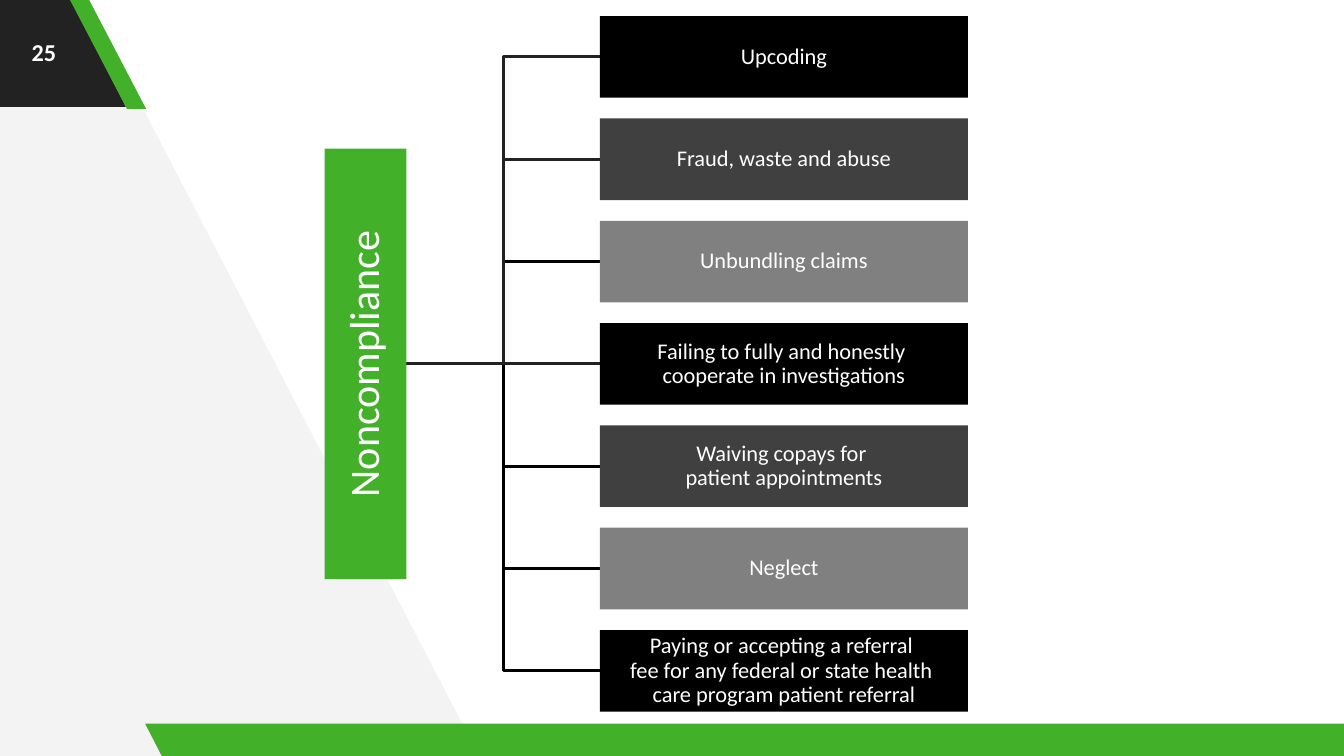
from pptx import Presentation
from pptx.dml.color import RGBColor
from pptx.enum.shapes import MSO_CONNECTOR, MSO_SHAPE
from pptx.enum.text import MSO_ANCHOR, PP_ALIGN
from pptx.oxml.xmlchemy import OxmlElement
from pptx.util import Inches, Pt

RECTANGLE = MSO_SHAPE.RECTANGLE
PARALLELOGRAM = MSO_SHAPE.PARALLELOGRAM
STRAIGHT, ELBOW = MSO_CONNECTOR.STRAIGHT, MSO_CONNECTOR.ELBOW
MIDDLE, CENTER = MSO_ANCHOR.MIDDLE, PP_ALIGN.CENTER

GREEN = RGBColor(0x43, 0xB0, 0x2A)
CHARCOAL = RGBColor(0x22, 0x22, 0x22)
PALE_GRAY = RGBColor(0xF3, 0xF3, 0xF3)
BLACK = RGBColor(0x00, 0x00, 0x00)
DARK_GRAY = RGBColor(0x40, 0x40, 0x40)
MID_GRAY = RGBColor(0x80, 0x80, 0x80)
SOFT_BLACK = RGBColor(0x21, 0x23, 0x22)
WHITE = RGBColor(0xFF, 0xFF, 0xFF)

FONT = "Calibri"
BOX_FILLS = (BLACK, DARK_GRAY, MID_GRAY)

# Each example with the colour of the line that leads to it
EXAMPLES = [
    ("Upcoding", SOFT_BLACK),
    ("Fraud, waste and abuse", SOFT_BLACK),
    ("Unbundling claims", BLACK),
    ("Failing to fully and honestly \vcooperate in investigations", SOFT_BLACK),
    ("Waiving copays for \vpatient appointments", BLACK),
    ("Neglect", BLACK),
    ("Paying or accepting a referral \vfee for any federal or state health \v"
     "care program patient referral", BLACK),
]


def paint(shape, color):
    shape.shadow.inherit = False
    shape.fill.solid()
    shape.fill.fore_color.rgb = color
    shape.line.fill.background()


def write(shape, text, size, inset, bold=False):
    frame = shape.text_frame
    frame.word_wrap = True
    frame.vertical_anchor = MIDDLE
    frame.margin_left = frame.margin_right = Inches(inset)
    frame.margin_top = frame.margin_bottom = Inches(inset)
    frame.text = text
    para = frame.paragraphs[0]
    para.alignment = CENTER
    para.line_spacing = 0.9
    font = para.font
    font.name, font.size, font.bold = FONT, Pt(size), bold
    font.color.rgb = WHITE


def add_block(page, left, top, width, height, color):
    block = page.shapes.add_shape(RECTANGLE, Inches(left), Inches(top),
                                  Inches(width), Inches(height))
    paint(block, color)
    return block


def add_slanted_band(page, left, top, width, height, slant, color):
    band = page.shapes.add_shape(PARALLELOGRAM, Inches(left), Inches(top),
                                 Inches(width), Inches(height))
    band.adjustments[0] = slant
    band._element.spPr.xfrm.set("flipH", "1")
    paint(band, color)


def add_branch(page, start, end, color):
    kind = STRAIGHT if start[1] == end[1] else ELBOW
    branch = page.shapes.add_connector(kind, *map(Inches, start + end))
    branch.line.color.rgb = color
    branch.line.width = Pt(2.25)
    branch._element.spPr.append(OxmlElement("a:effectLst"))


def add_backdrop(page):
    # Pale wedge on the left
    outline = page.shapes.build_freeform(Inches(4.75), Inches(7.5))
    corners = [(0.86, 0), (0, 0), (0, 7.5)]
    outline.add_line_segments([(Inches(x), Inches(y)) for x, y in corners])
    paint(outline.convert_to_shape(), PALE_GRAY)

    # Corner tab, its green edge and the footer band
    add_slanted_band(page, -1.32, -0.03, 2.57, 1.09, 0.515, CHARCOAL)
    add_slanted_band(page, 0.69, -0.01, 0.76, 1.09, 0.75, GREEN)
    add_slanted_band(page, 1.44, 7.18, 12.2, 0.33, 0.515, GREEN)


def add_page_number(page, number, left, top, width, height):
    box = page.shapes.add_textbox(Inches(left), Inches(top),
                                  Inches(width), Inches(height))
    write(box, number, 17.3, 0.13, bold=True)


def add_hierarchy(page, left, top, width, height):
    thickness, hub_length, box_width = 0.81, 4.27, 3.65
    box_left = left + width - box_width
    pitch = (height - thickness) / (len(EXAMPLES) - 1)
    middle = top + height / 2
    centers = [top + thickness / 2 + i * pitch for i in range(len(EXAMPLES))]
    centers[len(EXAMPLES) // 2] = middle

    # Branches, lowest first
    for center, (_, color) in reversed(list(zip(centers, EXAMPLES))):
        add_branch(page, (left + thickness, middle), (box_left, center), color)

    # Hub, turned to read upwards
    hub = add_block(page, left + (thickness - hub_length) / 2,
                    middle - thickness / 2, hub_length, thickness, GREEN)
    hub.rotation = 270
    write(hub, "Noncompliance", 30, 0.02)

    # Example boxes
    for i, (center, (text, _)) in enumerate(zip(centers, EXAMPLES)):
        box = add_block(page, box_left, center - thickness / 2,
                        box_width, thickness, BOX_FILLS[i % len(BOX_FILLS)])
        write(box, text, 16, 0.01)


def main():
    deck = Presentation()
    deck.slide_width, deck.slide_height = Inches(13.33), Inches(7.5)
    page = deck.slides.add_slide(deck.slide_layouts[6])
    add_backdrop(page)
    add_page_number(page, "25", 0, 0, 0.87, 1.07)
    add_hierarchy(page, 3.22, 0.16, 6.38, 6.9)
    deck.save("out.pptx")


if __name__ == "__main__":
    main()
